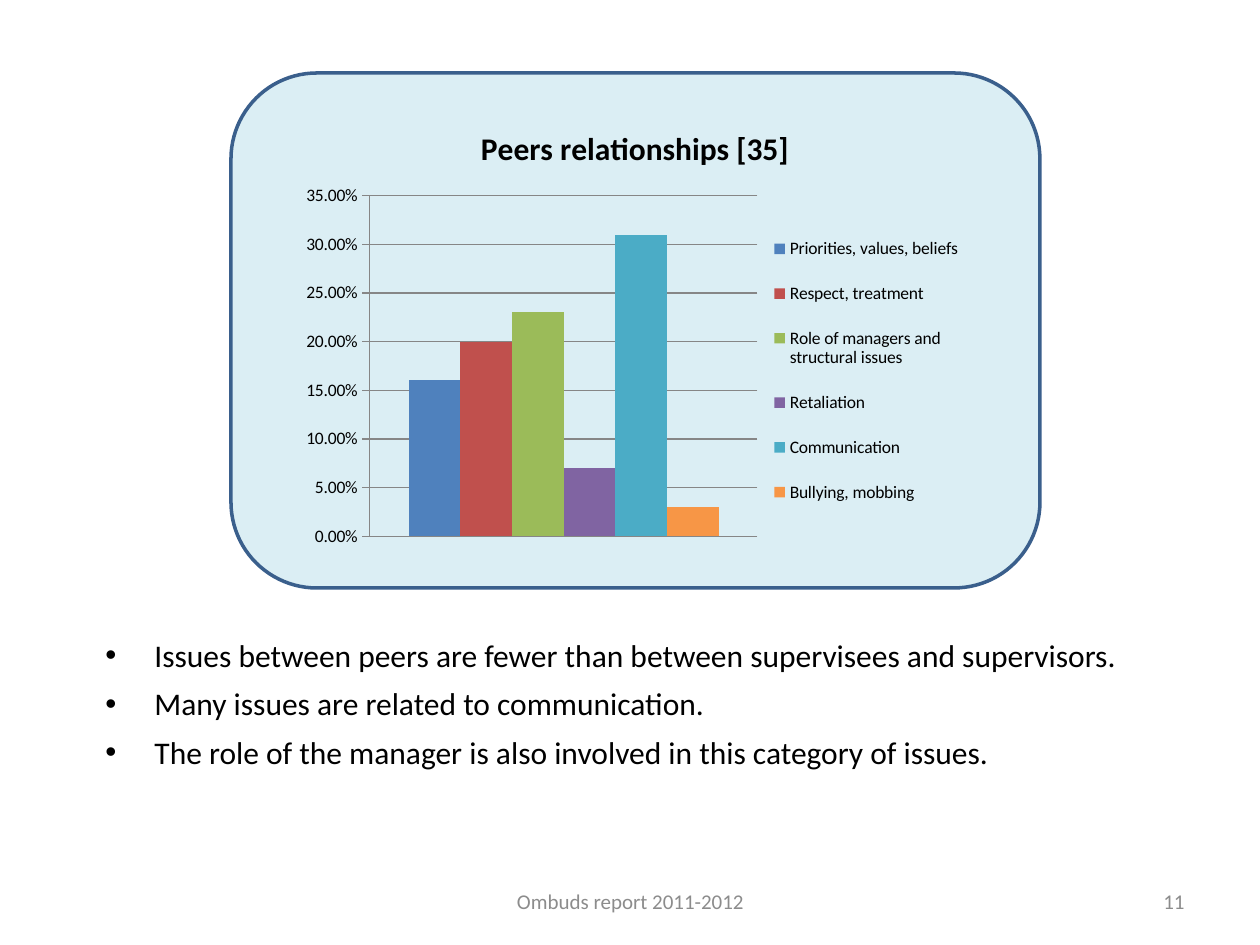
from dataclasses import dataclass

from lxml import etree
from pptx import Presentation
from pptx.chart.data import CategoryChartData
from pptx.dml.color import RGBColor
from pptx.enum.chart import XL_CHART_TYPE, XL_LEGEND_POSITION, XL_TICK_MARK
from pptx.enum.shapes import MSO_SHAPE
from pptx.enum.text import MSO_ANCHOR, PP_ALIGN
from pptx.oxml.ns import qn
from pptx.util import Pt

COLUMNS = XL_CHART_TYPE.COLUMN_CLUSTERED
LEGEND_RIGHT = XL_LEGEND_POSITION.RIGHT
TICK_OUTSIDE = XL_TICK_MARK.OUTSIDE
ROUNDED = MSO_SHAPE.ROUNDED_RECTANGLE
TOP, MIDDLE = MSO_ANCHOR.TOP, MSO_ANCHOR.MIDDLE
LEFT, CENTER, RIGHT = PP_ALIGN.LEFT, PP_ALIGN.CENTER, PP_ALIGN.RIGHT
EMU_PER_PX = 914400 / 126


@dataclass(frozen=True)
class Theme:
    """Colours and type sizes of the slide."""
    font: str = "Calibri"
    ink: str = "000000"
    muted: str = "8C8C8C"
    grid: str = "868686"
    panel: str = "DBEEF4"
    panel_edge: str = "3A5F8C"
    heading: int = 18
    body: int = 18
    footer: int = 12
    chart: int = 10


THEME = Theme()
ISSUES = [
    ("Priorities, values, beliefs", 0.16, "4F81BD"),
    ("Respect, treatment", 0.20, "C0504D"),
    ("Role of managers and structural issues", 0.23, "9BBB59"),
    ("Retaliation", 0.07, "8064A2"),
    ("Communication", 0.31, "4BACC6"),
    ("Bullying, mobbing", 0.03, "F79646"),
]
FINDINGS = [
    "Issues between peers are fewer than between supervisees and supervisors.",
    "Many issues are related to communication.",
    "The role of the manager is also involved in this category of issues.",
]


def px(length):
    """Turn pixels into EMU."""
    return round(length * EMU_PER_PX)


def rgb(color):
    """Turn a hex string into a colour."""
    return RGBColor.from_string(color)


def set_font(font, size, color=THEME.ink, bold=False):
    """Apply the theme typeface with the given format."""
    font.name = THEME.font
    font.size = Pt(size)
    font.bold = bold
    font.color.rgb = rgb(color)


def write_text(paragraph, text, *, size, color=THEME.ink, bold=False, align=LEFT):
    """Add one formatted run to a paragraph."""
    paragraph.alignment = align
    run = paragraph.add_run()
    run.text = text
    set_font(run.font, size, color, bold)


def add_text_frame(slide, box, anchor=TOP):
    """Add a wrapping text box and return its frame."""
    frame = slide.shapes.add_textbox(*map(px, box)).text_frame
    frame.word_wrap = True
    frame.vertical_anchor = anchor
    return frame


def add_footer(slide, text, box, align):
    """Add a small grey line at the foot of the slide."""
    frame = add_text_frame(slide, box, MIDDLE)
    write_text(frame.paragraphs[0], text, size=THEME.footer, color=THEME.muted, align=align)


def add_panel(slide, box):
    """Add the rounded panel behind the chart."""
    panel = slide.shapes.add_shape(ROUNDED, *map(px, box))
    panel.shadow.inherit = False
    panel.fill.solid()
    panel.fill.fore_color.rgb = rgb(THEME.panel)
    panel.line.color.rgb = rgb(THEME.panel_edge)
    panel.line.width = Pt(2)


def add_findings(slide, findings, box, indent):
    """Add the bulleted findings with a hanging indent."""
    frame = add_text_frame(slide, box)
    for index, finding in enumerate(findings):
        paragraph = frame.add_paragraph() if index else frame.paragraphs[0]
        write_text(paragraph, finding, size=THEME.body)
        paragraph.space_before = Pt(6 if index else 0)
        properties = paragraph._p.get_or_add_pPr()
        properties.set("marL", str(px(indent)))
        properties.set("indent", str(-px(indent)))
        etree.SubElement(properties, qn("a:buFont"), typeface="Arial")
        etree.SubElement(properties, qn("a:buChar"), char="•")


def place(parent, index, **fractions):
    """Give a chart part a manual layout in fractions of the chart."""
    for previous in parent.findall(qn("c:layout")):
        parent.remove(previous)
    layout = etree.Element(qn("c:layout"))
    manual = etree.SubElement(layout, qn("c:manualLayout"))
    if parent.tag == qn("c:plotArea"):
        etree.SubElement(manual, qn("c:layoutTarget"), val="inner")
    for side in "xy":
        etree.SubElement(manual, qn(f"c:{side}Mode"), val="edge")
    for side, fraction in fractions.items():
        etree.SubElement(manual, qn(f"c:{side}"), val=str(fraction))
    parent.insert(index, layout)


def style_value_axis(axis):
    """Format the percentage scale and its gridlines."""
    axis.minimum_scale, axis.maximum_scale, axis.major_unit = 0, 0.35, 0.05
    axis.major_tick_mark = TICK_OUTSIDE
    axis.tick_labels.number_format = "0.00%"
    axis.tick_labels.number_format_is_linked = False
    axis.has_major_gridlines = True
    for line in (axis.format.line, axis.major_gridlines.format.line):
        line.color.rgb = rgb(THEME.grid)
        line.width = Pt(0.75)


def add_issue_chart(slide, title, issues, box):
    """Add the column chart with one series for each issue."""
    data = CategoryChartData(number_format="0.00%")
    data.categories = ["1"]
    for name, share, _ in issues:
        data.add_series(name, [share])
    chart = slide.shapes.add_chart(COLUMNS, *map(px, box), data).chart
    set_font(chart.font, THEME.chart)
    chart.has_title = True
    heading = chart.chart_title.text_frame.paragraphs[0]
    write_text(heading, title, size=THEME.heading, bold=True, align=CENTER)
    chart.chart_title.include_in_layout = False
    chart.has_legend = True
    chart.legend.position = LEGEND_RIGHT
    chart.legend.include_in_layout = False
    chart.category_axis.visible = False
    style_value_axis(chart.value_axis)
    plot = chart.plots[0]
    plot.gap_width = 150
    plot.vary_by_categories = False
    for series, (_, _, color) in zip(plot.series, issues):
        series.format.fill.solid()
        series.format.fill.fore_color.rgb = rgb(color)
    place(chart._chartSpace.chart.plotArea, 0, x=0.11, y=0.2, w=0.57, h=0.75)
    place(chart.legend._element, 1, x=0.69, y=0.24, w=0.3, h=0.69)


def main():
    """Build the slide and save it."""
    presentation = Presentation()
    presentation.slide_width, presentation.slide_height = px(1260), px(945)
    slide = presentation.slides.add_slide(presentation.slide_layouts[6])
    add_footer(slide, "11", (903, 876, 294, 50), RIGHT)
    add_panel(slide, (231, 73, 809, 515))
    add_findings(slide, FINDINGS, (93, 630, 1053, 186), indent=49)
    add_issue_chart(slide, "Peers relationships [35]", ISSUES, (295, 105, 680, 454))
    add_footer(slide, "Ombuds report 2011-2012", (431, 876, 399, 50), CENTER)
    presentation.save("out.pptx")


if __name__ == "__main__":
    main()
